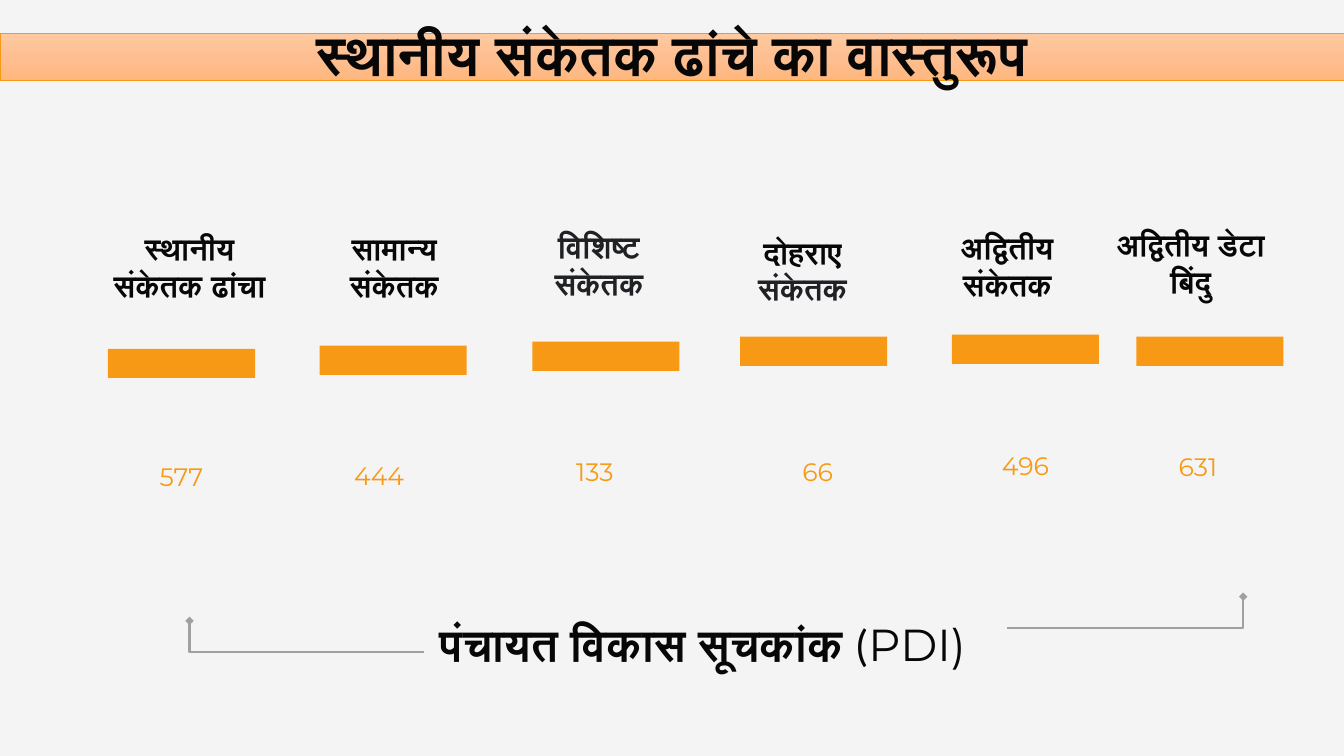
from copy import deepcopy
from lxml.etree import SubElement
from pptx import Presentation
from pptx.dml.color import RGBColor
from pptx.enum.shapes import MSO_CONNECTOR as CONNECTOR, MSO_SHAPE as SHAPE
from pptx.enum.text import MSO_ANCHOR as ANCHOR, PP_ALIGN as ALIGN
from pptx.oxml.ns import qn
from pptx.util import Inches, Pt

ORANGE, INK, CHARCOAL, GRAY = "F89915", "070707", "202124", "A0A0A3"


def color(value):
    return RGBColor.from_string(value)


def write(shape, *paragraphs, size=22, spacing=None):
    frame = shape.text_frame
    frame.word_wrap = True
    frame.vertical_anchor = ANCHOR.MIDDLE
    frame.margin_left = frame.margin_right = Inches(0.1)
    frame.margin_top = frame.margin_bottom = Inches(0.1)
    for index, runs in enumerate(paragraphs):
        paragraph = frame.add_paragraph() if index else frame.paragraphs[0]
        paragraph.alignment = ALIGN.CENTER
        paragraph.line_spacing = spacing
        for text, font_name, font_color, bold in runs:
            run = paragraph.add_run()
            run.text = text
            run.font.name = font_name
            run.font.size = Pt(size)
            run.font.bold = bold
            run.font.color.rgb = color(font_color)


presentation = Presentation()
presentation.slide_width = Inches(13.33)
presentation.slide_height = Inches(7.5)
slide = presentation.slides.add_slide(presentation.slide_layouts[6])
slide.background.fill.solid()
slide.background.fill.fore_color.rgb = color("F4F4F4")
shapes = slide.shapes

indicators = [
    ([("स्थानीय संकेतक ढांचा", "Calibri", INK)], (0.97, 2.03, 1.23), (1.07, 3.46), "577", (1.31, 4.36, 0.74)),
    ([("सामान्य संकेतक", "Calibri", INK)], (3, 2.03, 1.23), (3.17, 3.43), "444", (3.27, 4.35, 0.74)),
    ([("विशिष्ट संकेतक", "Arial", CHARCOAL)], (5.03, 2.01, 1.23), (5.28, 3.39), "133", (5.41, 4.41, 0.53)),
    ([("दोहराए", "Calibri", INK), ("संकेतक", "Arial", CHARCOAL)],
     (7.05, 2.12, 1.12), (7.34, 3.34), "66", (7.62, 4.41, 0.53)),
    ([("अद्वितीय संकेतक", "Calibri", INK)], (9.08, 2.08, 1.12), (9.44, 3.32), "496", (9.68, 4.35, 0.53)),
    ([("अद्वितीय डेटा बिंदु", "Calibri", INK)], (10.9, 2.05, 1.12), (11.27, 3.34), "631", (11.39, 4.36, 0.53)),
]
for lines, (left, top, height), (bar_left, bar_top), count, (count_left, count_top, count_height) in indicators:
    label = shapes.add_textbox(Inches(left), Inches(top), Inches(1.82), Inches(height))
    write(label, *[[(*line, True)] for line in lines])
    bar = shapes.add_shape(SHAPE.RECTANGLE, Inches(bar_left), Inches(bar_top), Inches(1.46), Inches(0.29))
    bar.shadow.inherit = False
    bar.fill.solid()
    bar.fill.fore_color.rgb = color(ORANGE)
    bar.line.fill.background()
    number = shapes.add_textbox(Inches(count_left), Inches(count_top), Inches(0.98), Inches(count_height))
    write(number, [(count, "Montserrat", ORANGE, False)], size=18)

title = shapes.add_shape(SHAPE.RECTANGLE, Inches(0), Inches(0.33), Inches(13.33), Inches(0.47))
title.shadow.inherit = False
title.line.color.rgb = color(ORANGE)
title.line.width = Pt(0.5)
title.fill.gradient()
title.fill.gradient_angle = 270
first_stop = title._element.spPr.find(".//" + qn("a:gs"))
first_stop.addnext(deepcopy(first_stop))
for stop, position, shade in zip(title.fill.gradient_stops, (0, 0.5, 1), ("FEC9A0", "FDBF92", "FFB77D")):
    stop.position = position
    stop.color.rgb = color(shade)
write(title, [("स्थानीय संकेतक ढांचे का वास्तुरूप", "Calibri", INK, True)], size=40, spacing=0.9)

index_name = shapes.add_textbox(Inches(3.9), Inches(6.16), Inches(6.14), Inches(0.45))
write(index_name, [("पंचायत विकास सूचकांक ", "Calibri", INK, True), ("(", "Calibri", INK, False),
                   ("PDI)", "Montserrat", INK, False)], size=32)

for start_x, start_y, end_x, end_y in [(4.21, 6.47, 1.88, 6.16), (9.99, 6.23, 12.33, 5.92)]:
    bracket = shapes.add_connector(CONNECTOR.ELBOW, Inches(start_x), Inches(start_y), Inches(end_x), Inches(end_y))
    bracket.line.color.rgb = color(GRAY)
    bracket.line.width = Pt(1.5)
    properties = bracket._element.spPr
    properties.find(qn("a:prstGeom")).set("prst", "bentConnector2")
    SubElement(properties.find(qn("a:ln")), qn("a:tailEnd"), type="diamond")
    SubElement(properties, qn("a:effectLst"))

presentation.save("out.pptx")
